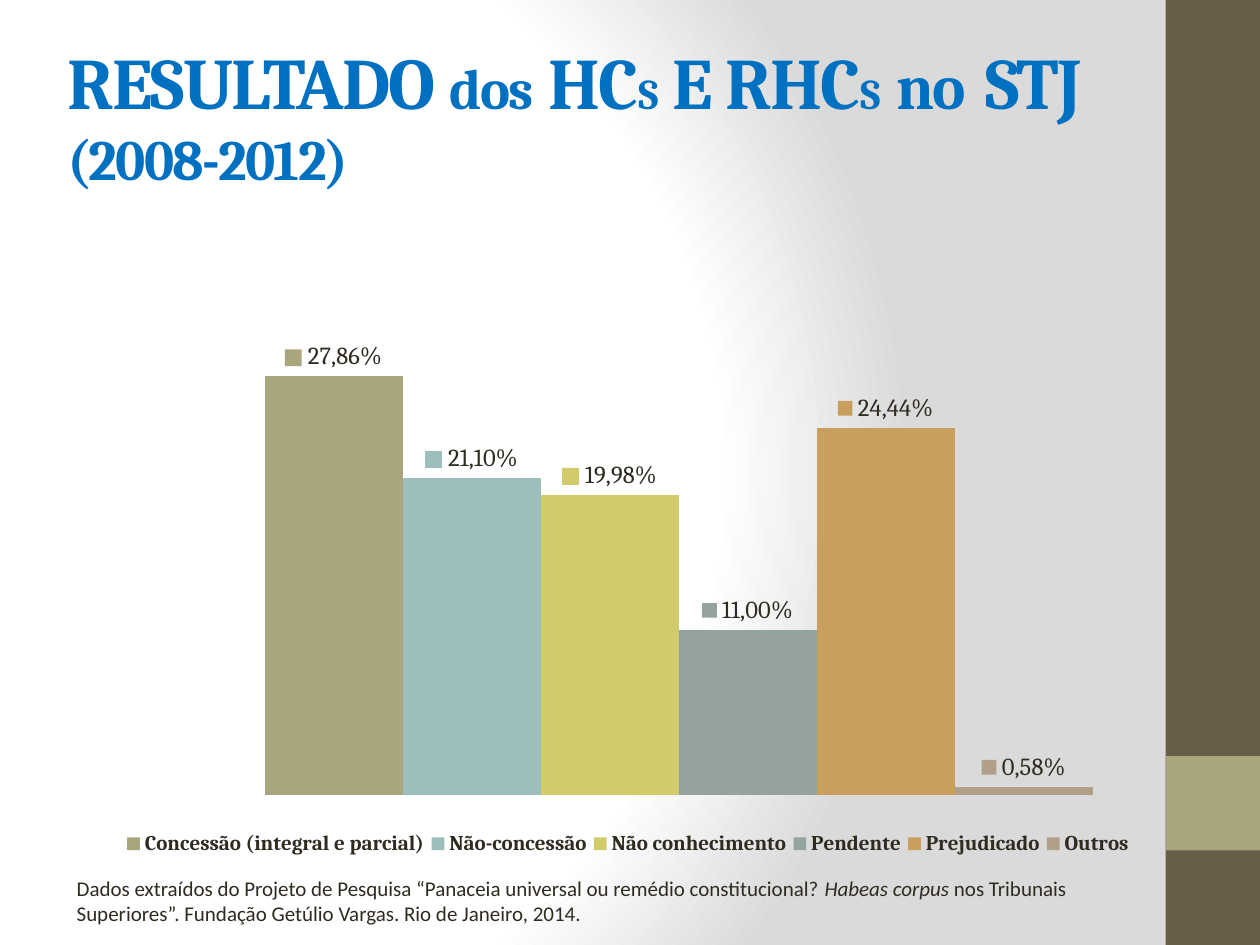
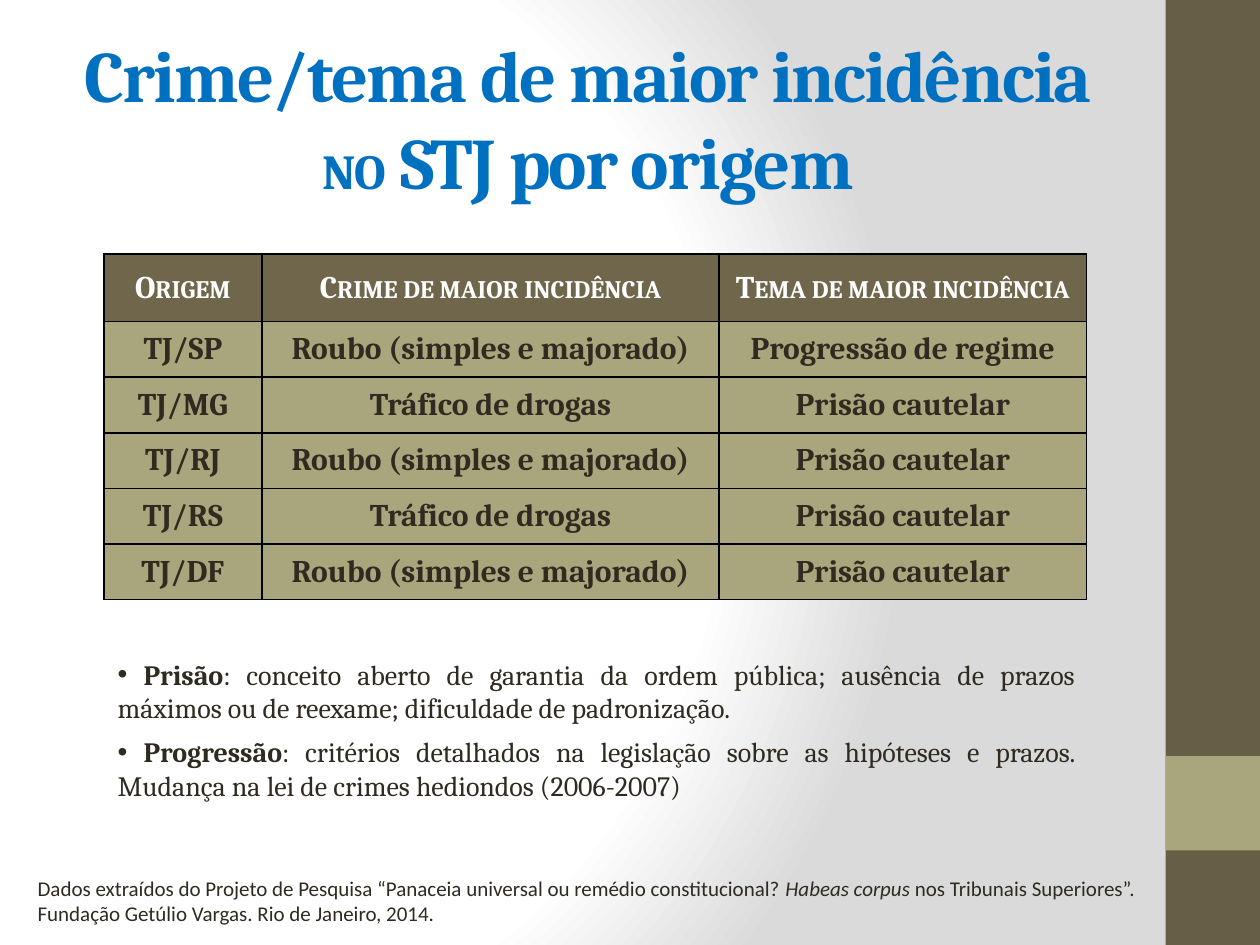
"""Build two slides on habeas corpus results: a column chart and a table."""
from pptx import Presentation
from pptx.chart.data import CategoryChartData
from pptx.dml.color import RGBColor
from pptx.enum.chart import XL_CHART_TYPE as CT, XL_LABEL_POSITION as LP, XL_LEGEND_POSITION as LG
from pptx.enum.shapes import MSO_SHAPE as SHAPE
from pptx.enum.text import MSO_ANCHOR as ANCHOR, PP_ALIGN as ALIGN
from pptx.oxml import parse_xml
from pptx.oxml.ns import nsdecls, qn
from pptx.util import Pt

COLORS = {
    "white": "FFFFFF", "edge": "DADADA", "band": "675E47", "accent": "A9A57C",
    "title": "0070C0", "text": "2F2B20", "header": "6F664C", "border": "000000",
}
TITLE = {"size": 41.4, "name": "Cambria", "color": "title", "bold": True, "spc": -100}
BODY = {"size": 16, "name": "Cambria", "color": "text"}
SOURCE = {"size": 12, "name": "Calibri", "color": "text"}
CELL = {"size": 18, "name": "Cambria", "color": "text", "bold": True}
HEADER = {**CELL, "color": "white", "cap": "small"}
LABEL = {"size": 14, "name": "Cambria", "color": "text", "bold": False}
LEGEND = {"size": 12, "name": "Cambria", "color": "text", "bold": True}
CHART = {"size": 11, "name": "Calibri", "color": "text"}
PERCENT = "0.00%"

SOURCE_RUNS = [
    ("Dados extraídos do Projeto de Pesquisa “Panaceia universal ou remédio constitucional? ", {}),
    ("Habeas corpus ", {"italic": True}),
    ("nos Tribunais Superiores”. Fundação Getúlio Vargas. Rio de Janeiro, 2014.", {}),
]
RESULTS = [
    ("Concessão (integral e parcial)", 0.2786, "A9A57C", 16),
    ("Não-concessão", 0.211, "9CBEBD", 16),
    ("Não conhecimento", 0.1998, "D2CB6C", 16),
    ("Pendente", 0.11, "95A39D", 14),
    ("Prejudicado", 0.2444, "C89F5D", 14),
    ("Outros", 0.0058, "B1A089", 14),
]
ROBBERY, DRUGS, CUSTODY = "Roubo (simples e majorado)", "Tráfico de drogas", "Prisão cautelar"
CRIMES = [
    ("Origem", "Crime de maior incidência", "Tema de maior incidência"),
    ("TJ/SP", ROBBERY, "Progressão de regime"),
    ("TJ/MG", DRUGS, CUSTODY),
    ("TJ/RJ", ROBBERY, CUSTODY),
    ("TJ/RS", DRUGS, CUSTODY),
    ("TJ/DF", ROBBERY, CUSTODY),
]
NOTES = [
    ("Prisão", ": conceito aberto de garantia da ordem pública; ausência de prazos máximos "
               "ou de reexame; dificuldade de padronização."),
    ("Progressão", ": critérios detalhados na legislação sobre as hipóteses e prazos. "
                   "Mudança na lei de crimes hediondos (2006-2007)"),
]


def rgb(color):
    return RGBColor.from_string(COLORS.get(color, color))


def pts(*values):
    return [Pt(v) for v in values]


def set_font(font, fmt):
    for key, value in fmt.items():
        if key == "color":
            font.color.rgb = rgb(value)
        elif key == "size":
            font.size = Pt(value)
        elif key not in ("spc", "cap"):
            setattr(font, key, value)


def layout_xml(x, y, w, h, inner=False):
    target = '<c:layoutTarget val="inner"/>' if inner else ""
    sizes = "".join(f'<c:{k} val="{v}"/>' for k, v in zip("xywh", (x, y, w, h)))
    return parse_xml(
        f'<c:layout {nsdecls("c")}><c:manualLayout>{target}'
        f'<c:xMode val="edge"/><c:yMode val="edge"/>{sizes}</c:manualLayout></c:layout>')


class Deck:
    def __init__(self):
        self.prs = Presentation()
        self.prs.slide_width, self.prs.slide_height = pts(720, 540)
        self.s = None
        self.background()

    def background(self):
        master = self.prs.slide_master
        master.background.fill.solid()
        fill = master.element.find(".//" + qn("p:bgPr"))
        stops = "".join(
            f'<a:gs pos="{pos}"><a:srgbClr val="{COLORS[c]}"/></a:gs>'
            for pos, c in ((0, "white"), (75000, "white"), (100000, "edge")))
        fill.replace(fill[0], parse_xml(
            f'<a:gradFill {nsdecls("a")} rotWithShape="1"><a:gsLst>{stops}</a:gsLst>'
            '<a:path path="circle"><a:fillToRect l="20000" t="50000" r="100000" b="50000"/>'
            '</a:path></a:gradFill>'))

    def slide(self):
        self.s = self.prs.slides.add_slide(self.prs.slide_layouts[5])
        self.rect(666, 0, 54, 540, "band")
        self.rect(666, 432, 54, 54, "accent")

    def rect(self, x, y, w, h, color):
        sp = self.s.shapes.add_shape(SHAPE.RECTANGLE, *pts(x, y, w, h))
        sp.shadow.inherit = False
        sp.fill.solid()
        sp.fill.fore_color.rgb = rgb(color)
        sp.line.fill.background()

    def runs(self, p, runs, base):
        for text, extra in runs:
            if text == "\n":
                p.add_line_break()
                continue
            r = p.add_run()
            r.text = text
            fmt = {**base, **extra}
            set_font(r.font, fmt)
            for key in ("spc", "cap"):
                if key in fmt:
                    r._r.get_or_add_rPr().set(key, str(fmt[key]))

    def title(self, x, y, runs, align=ALIGN.LEFT):
        sp = self.s.shapes.title
        sp.left, sp.top, sp.width, sp.height = pts(x, y, 600, 90)
        tf = sp.text_frame
        tf.vertical_anchor = ANCHOR.MIDDLE
        tf.paragraphs[0].alignment = align
        self.runs(tf.paragraphs[0], runs, TITLE)

    def textbox(self, x, y, w, h):
        tf = self.s.shapes.add_textbox(*pts(x, y, w, h)).text_frame
        tf.word_wrap = True
        return tf

    def source(self, x, w):
        tf = self.textbox(x, 500.4, w, 28.8)
        tf.vertical_anchor = ANCHOR.MIDDLE
        self.runs(tf.paragraphs[0], SOURCE_RUNS, SOURCE)

    def bullets(self, x, y, w, h, notes):
        tf = self.textbox(x, y, w, h)
        for i, (term, text) in enumerate(notes):
            p = tf.add_paragraph() if i else tf.paragraphs[0]
            p.alignment, p.space_before = ALIGN.JUSTIFY, Pt(6)
            pPr = p._p.get_or_add_pPr()
            pPr.append(parse_xml(f'<a:buFont {nsdecls("a")} typeface="Arial"/>'))
            pPr.append(parse_xml(f'<a:buChar {nsdecls("a")} char="•"/>'))
            self.runs(p, [(" ", {}), (term, {"bold": True}), (text, {})], BODY)

    def chart(self, x, y, w, h, results):
        data = CategoryChartData(number_format=PERCENT)
        data.categories = ["1"]
        for name, value, *_ in results:
            data.add_series(name, [value])
        chart = self.s.shapes.add_chart(CT.COLUMN_CLUSTERED, *pts(x, y, w, h), data).chart
        set_font(chart.font, CHART)
        chart.has_title = False
        chart.category_axis.visible = False
        axis = chart.value_axis
        axis.visible = axis.has_major_gridlines = False
        axis.minimum_scale, axis.maximum_scale = 0, 0.3
        axis.tick_labels.number_format = PERCENT
        axis.tick_labels.number_format_is_linked = False

        chart.has_legend = True
        legend = chart.legend
        legend.position, legend.include_in_layout = LG.BOTTOM, True
        set_font(legend.font, LEGEND)
        legend._element.find(qn("c:legendPos")).addnext(layout_xml(0.04, 0.9, 0.89, 0.06))

        plot = chart.plots[0]
        plot.vary_by_categories, plot.gap_width, plot.overlap = False, 150, 0
        area = chart._chartSpace.chart.plotArea
        for old in area.findall(qn("c:layout")):
            area.remove(old)
        area.insert(0, layout_xml(0.076, 0.167, 0.907, 0.689, inner=True))
        for series, (_, value, color, size) in zip(plot.series, results):
            series.format.fill.solid()
            series.format.fill.fore_color.rgb = rgb(color)
            self.label(series, value, size)

    def label(self, series, value, size):
        labels = series.data_labels
        settings = {"number_format": PERCENT, "number_format_is_linked": False,
                    "position": LP.OUTSIDE_END, "show_value": True}
        for key, setting in settings.items():
            setattr(labels, key, setting)
        set_font(labels.font, {**LABEL, "size": size, "bold": True})
        label = series.points[0].data_label
        p = label.text_frame.paragraphs[0]
        self.runs(p, [(f"{value:.2%}".replace(".", ","), {})], LABEL)
        label.position = LP.OUTSIDE_END
        for key in series._element.iter(qn("c:showLegendKey")):
            key.set("val", "1")

    def table(self, x, y, widths, heights, rows):
        size = pts(x, y, sum(widths), sum(heights))
        table = self.s.shapes.add_table(len(rows), len(widths), *size).table
        for col, width in zip(table.columns, widths):
            col.width = Pt(width)
        for i, (row, height) in enumerate(zip(rows, heights)):
            table.rows[i].height = Pt(height)
            for j, text in enumerate(row):
                self.cell(table.cell(i, j), text, HEADER if i == 0 else CELL,
                          "header" if i == 0 else "accent")

    def cell(self, cell, text, fmt, fill):
        cell.fill.solid()
        cell.fill.fore_color.rgb = rgb(fill)
        cell.vertical_anchor = ANCHOR.MIDDLE
        cell.margin_left = cell.margin_right = Pt(5)
        cell.margin_top = cell.margin_bottom = 0
        p = cell.text_frame.paragraphs[0]
        p.alignment, p.space_after = ALIGN.CENTER, Pt(10)
        self.runs(p, [(text, {})], fmt)
        tcPr = cell._tc.get_or_add_tcPr()
        for i, side in enumerate("LRTB"):
            tcPr.insert(i, parse_xml(
                f'<a:ln{side} {nsdecls("a")} w="{Pt(1)}"><a:solidFill>'
                f'<a:srgbClr val="{COLORS["border"]}"/></a:solidFill></a:ln{side}>'))


def main():
    deck = Deck()

    deck.slide()
    small, medium = {"size": 24.3}, {"size": 32.4}
    deck.title(31.3, 20.6, [
        ("RESULTADO ", {}), ("dos", medium), (" HC", {}), ("S", small), (" E RHC", {}),
        ("S", small), (" ", {}), ("no", {"size": 36}), (" ", {"spc": 190}), ("STJ", {}),
        ("\n", {}), ("(2008-2012)", medium)])
    deck.source(36.7, 617.8)
    deck.chart(42.5, 134, 652.3, 374.4, RESULTS)

    deck.slide()
    deck.title(36, 21.6, [
        ("Crime/tema de maior incidência", {}), ("\n", {}), ("NO", {"size": 27.9}),
        (" STJ por origem", {})], ALIGN.CENTER)
    deck.source(14.4, 686)
    deck.table(59.4, 145.2, [90.2, 261.4, 209.8], [38.6] + [31.8] * 5, CRIMES)
    deck.bullets(60.2, 372, 561.6, 90.7, NOTES)

    deck.prs.save("out.pptx")


if __name__ == "__main__":
    main()
